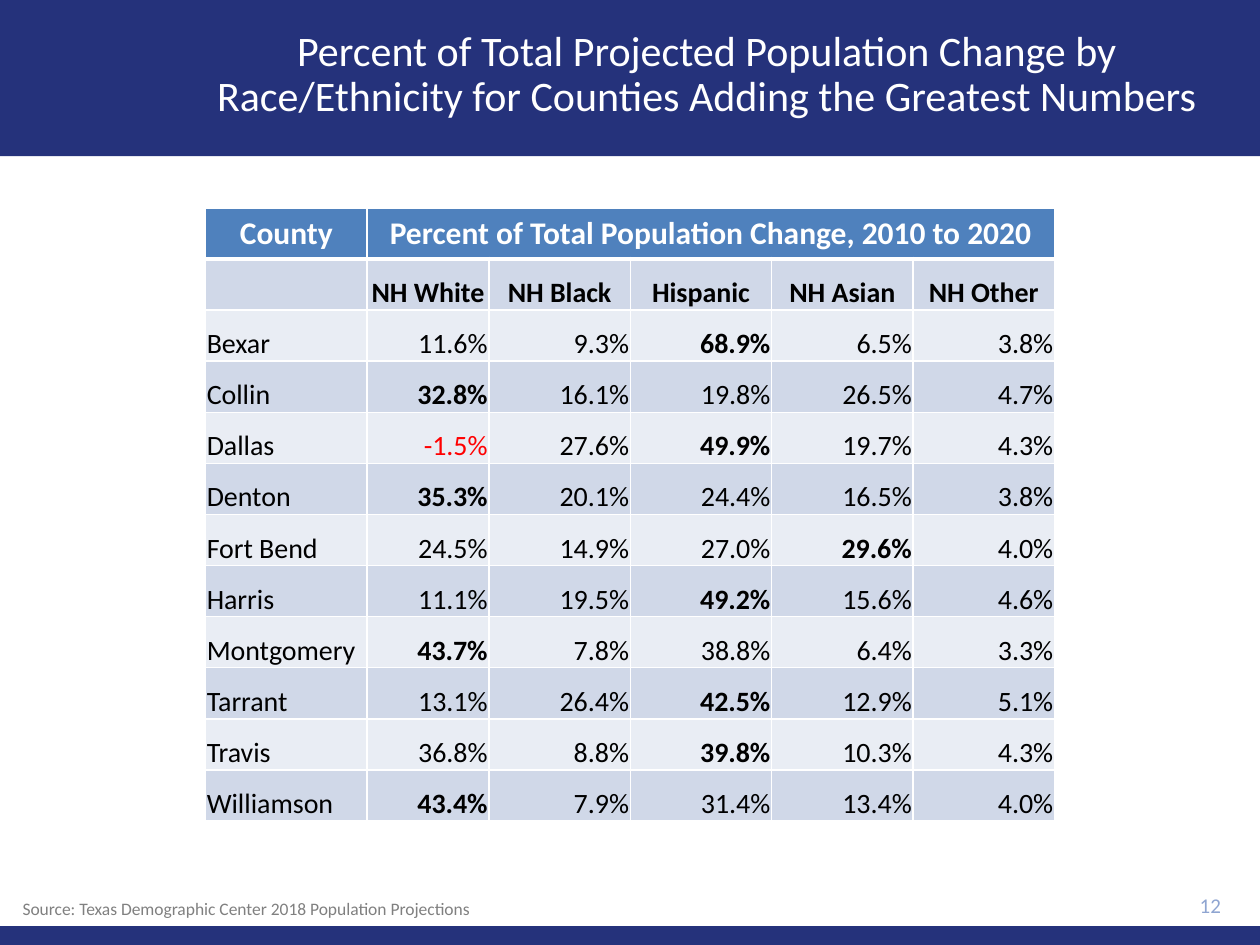
from lxml.etree import SubElement
from pptx import Presentation
from pptx.dml.color import RGBColor
from pptx.enum.shapes import MSO_SHAPE
from pptx.enum.text import MSO_ANCHOR, PP_ALIGN
from pptx.oxml.ns import qn
from pptx.util import Pt

NAVY, WHITE, BLACK = "25327B", "FFFFFF", "000000"
HEADER, BANDS = "4F81BD", ("D0D8E8", "E9EDF4")
COL_WIDTHS = (92.4, 69.6, 80.8, 80.8, 80.8, 80.8)
GROUPS = ("NH White", "NH Black", "Hispanic", "NH Asian", "NH Other")
COUNTIES = {
    "Bexar": (11.6, 9.3, 68.9, 6.5, 3.8),
    "Collin": (32.8, 16.1, 19.8, 26.5, 4.7),
    "Dallas": (-1.5, 27.6, 49.9, 19.7, 4.3),
    "Denton": (35.3, 20.1, 24.4, 16.5, 3.8),
    "Fort Bend": (24.5, 14.9, 27.0, 29.6, 4.0),
    "Harris": (11.1, 19.5, 49.2, 15.6, 4.6),
    "Montgomery": (43.7, 7.8, 38.8, 6.4, 3.3),
    "Tarrant": (13.1, 26.4, 42.5, 12.9, 5.1),
    "Travis": (36.8, 8.8, 39.8, 10.3, 4.3),
    "Williamson": (43.4, 7.9, 31.4, 13.4, 4.0),
}


def rgb(value):
    return RGBColor.from_string(value)


def style(p, size, color, align=PP_ALIGN.LEFT, bold=False):
    p.alignment = align
    p.font.name = "Calibri"
    p.font.size = Pt(size)
    p.font.bold = bold
    p.font.color.rgb = rgb(color)


def add_band(s, x, y, w, h):
    sp = s.shapes.add_shape(MSO_SHAPE.RECTANGLE, Pt(x), Pt(y), Pt(w), Pt(h))
    sp.shadow.inherit = False
    sp.fill.solid()
    sp.fill.fore_color.rgb = rgb(NAVY)
    sp.line.fill.background()


def add_text(s, x, y, w, h, text, size, color, align, anchor=MSO_ANCHOR.MIDDLE):
    tf = s.shapes.add_textbox(Pt(x), Pt(y), Pt(w), Pt(h)).text_frame
    tf.word_wrap = True
    tf.vertical_anchor = anchor
    p = tf.paragraphs[0]
    p.text = text
    style(p, size, color, align)
    return p


def set_borders(cell, top, bottom):
    tcPr = cell._tc.get_or_add_tcPr()
    for side, width in (("L", 1), ("R", 1), ("T", top), ("B", bottom)):
        ln = SubElement(tcPr, qn(f"a:ln{side}"), w=str(Pt(width)))
        fill = SubElement(ln, qn("a:solidFill"))
        SubElement(fill, qn("a:srgbClr"), val=WHITE)


def fill_header_cell(cell, text):
    cell.vertical_anchor = MSO_ANCHOR.MIDDLE
    p = cell.text_frame.paragraphs[0]
    p.text = text
    style(p, 18, WHITE, PP_ALIGN.CENTER, True)


def fill_body_cell(cell, text, align, bold=False, color=BLACK):
    cell.vertical_anchor = MSO_ANCHOR.BOTTOM
    cell.margin_left = cell.margin_right = cell.margin_top = Pt(0.75)
    cell.margin_bottom = Pt(0)
    p = cell.text_frame.paragraphs[0]
    p.text = text
    style(p, 16, color, align, bold)


def add_county_table(s, x, y, w, h):
    rows = len(COUNTIES) + 2
    tbl = s.shapes.add_table(rows, len(COL_WIDTHS), Pt(x), Pt(y), Pt(w), Pt(h)).table
    tbl.horz_banding = False
    for col, width in zip(tbl.columns, COL_WIDTHS):
        col.width = Pt(width)
    for i, row in enumerate(tbl.rows):
        row.height = Pt(h / rows)
        for cell in row.cells:
            set_borders(cell, 3 if i == 1 else 1, 3 if i == 0 else 1)
            cell.fill.solid()
            cell.fill.fore_color.rgb = rgb(BANDS[(i - 1) % 2] if i else HEADER)

    tbl.cell(0, 1).merge(tbl.cell(0, len(GROUPS)))
    fill_header_cell(tbl.cell(0, 0), "County")
    fill_header_cell(tbl.cell(0, 1), "Percent of Total Population Change, 2010 to 2020")
    for j, group in enumerate(GROUPS, 1):
        fill_body_cell(tbl.cell(1, j), group, PP_ALIGN.CENTER, True)
    for i, (county, values) in enumerate(COUNTIES.items(), 2):
        fill_body_cell(tbl.cell(i, 0), county, PP_ALIGN.LEFT)
        for j, value in enumerate(values, 1):
            fill_body_cell(tbl.cell(i, j), f"{value:.1f}%", PP_ALIGN.RIGHT,
                           value == max(values), "FF0000" if value < 0 else BLACK)


def add_title(s, x, y, w, h):
    add_band(s, x, y, w, h)
    p = add_text(s, x + 95, y + 7.2, w - 102.2, 72,
                 "Percent of Total Projected Population Change by "
                 "Race/Ethnicity for Counties Adding the Greatest Numbers",
                 24, WHITE, PP_ALIGN.CENTER)
    p.line_spacing = 0.9


def add_footer(s, x, y, w, h):
    add_band(s, x, y, w, h)
    add_text(s, x + 640.8, y - 24.5, 64, 24.5, "12", 12, "8FA5D1", PP_ALIGN.RIGHT)
    p = add_text(s, x + 5.8, y - 19.4, 690, 19.4,
                 "Source: Texas Demographic Center 2018 Population Projections",
                 10, "808080", PP_ALIGN.LEFT, MSO_ANCHOR.TOP)
    pPr = p._p.get_or_add_pPr()
    pPr.set("marL", str(Pt(62.6)))
    pPr.set("indent", str(-Pt(62.6)))


def main():
    prs = Presentation()
    prs.slide_width, prs.slide_height = Pt(720), Pt(540)
    s = prs.slides.add_slide(prs.slide_layouts[6])
    add_title(s, 0, 0, 720, 89.3)
    add_county_table(s, 117.4, 118.8, sum(COL_WIDTHS), 350.4)
    add_footer(s, 0, 529.2, 720, 10.8)
    prs.save("out.pptx")


if __name__ == "__main__":
    main()
